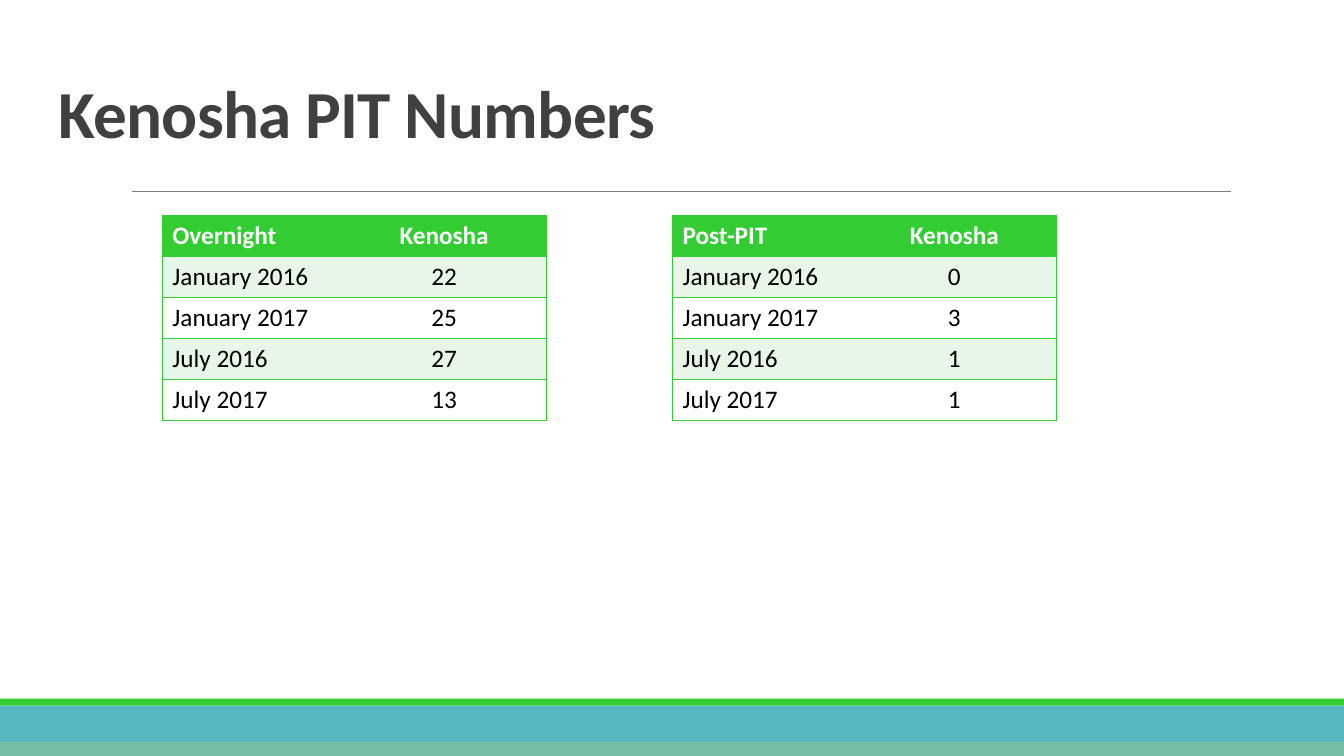
import dataclasses

import lxml.etree
import pptx
import pptx.dml.color
import pptx.enum.shapes
import pptx.enum.text
import pptx.oxml.ns
import pptx.util

SLIDE_WIDTH = pptx.util.Inches(13.33)
SLIDE_HEIGHT = pptx.util.Inches(7.5)
FONT = "Calibri"
GREEN = "33CC33"
WHITE = "FFFFFF"
STRIPE = "E8F6E8"

# Table grid, in percent of the slide
TABLE_TOP = 28.53
COLUMN_WIDTHS = (13.35, 15.23)
ROW_HEIGHT = 5.42


@dataclasses.dataclass
class Band:
    top: float
    height: float
    color: str


@dataclasses.dataclass
class CountTable:
    left: float
    heading: str
    counts: tuple[int, ...]


BANDS = (
    Band(93.33, 6.67, "58B6C0"),
    Band(92.4, 0.93, GREEN),
    Band(98.13, 1.87, "75BDA7"),
)
MONTHS = ("January 2016", "January 2017", "July 2016", "July 2017")
TABLES = (
    CountTable(12.08, "Overnight", (22, 25, 27, 13)),
    CountTable(50.04, "Post-PIT", (0, 3, 1, 1)),
)


def across(percent: float) -> int:
    return round(SLIDE_WIDTH * percent / 100)


def down(percent: float) -> int:
    return round(SLIDE_HEIGHT * percent / 100)


def color(value: str) -> pptx.dml.color.RGBColor:
    return pptx.dml.color.RGBColor.from_string(value)


def style_text(para, size: float, text_color: str, bold: bool) -> None:
    for span in para.runs:
        span.font.name = FONT
        span.font.size = pptx.util.Pt(size)
        span.font.bold = bold
        span.font.color.rgb = color(text_color)


def draw_band(page, band: Band) -> None:
    box = page.shapes.add_shape(
        pptx.enum.shapes.MSO_SHAPE.RECTANGLE,
        0, down(band.top), SLIDE_WIDTH, down(band.height))
    box.shadow.inherit = False
    box.fill.solid()
    box.fill.fore_color.rgb = color(band.color)
    box.line.fill.background()


def draw_rule(page) -> None:
    rule = page.shapes.add_connector(
        pptx.enum.shapes.MSO_CONNECTOR.STRAIGHT,
        across(9.83), down(25.33), across(91.6), down(25.33))
    rule.line.color.rgb = color("808080")
    rule.line.width = pptx.util.Pt(0.5)
    lxml.etree.SubElement(rule._element.spPr, pptx.oxml.ns.qn("a:effectLst"))


def draw_title(page) -> None:
    box = page.shapes.add_textbox(
        across(3.38), down(8.67), across(93.17), down(13.73))
    frame = box.text_frame
    frame.word_wrap = True
    frame.vertical_anchor = pptx.enum.text.MSO_ANCHOR.MIDDLE
    inset = across(0.98)
    frame.margin_left = frame.margin_right = inset
    frame.margin_top = frame.margin_bottom = inset
    frame.text = "Kenosha PIT Numbers"
    para = frame.paragraphs[0]
    para.line_spacing = 0.85
    style_text(para, 48, "404040", True)
    para.runs[0]._r.get_or_add_rPr().set("spc", "-50")


def set_borders(cell, open_side: str) -> None:
    """Outline a cell in green, leaving out the side between the columns."""
    properties = cell._tc.get_or_add_tcPr()
    for index, side in enumerate(("lnL", "lnR", "lnT", "lnB")):
        border = properties.makeelement(
            pptx.oxml.ns.qn(f"a:{side}"), {"w": str(pptx.util.Pt(1))})
        properties.insert(index, border)
        if side == open_side:
            lxml.etree.SubElement(border, pptx.oxml.ns.qn("a:noFill"))
        else:
            fill = lxml.etree.SubElement(border, pptx.oxml.ns.qn("a:solidFill"))
            lxml.etree.SubElement(fill, pptx.oxml.ns.qn("a:srgbClr"), val=GREEN)


def draw_table(page, data: CountTable) -> None:
    rows = [(data.heading, "Kenosha"), *zip(MONTHS, data.counts)]
    table = page.shapes.add_table(
        len(rows), len(COLUMN_WIDTHS), across(data.left), down(TABLE_TOP),
        across(sum(COLUMN_WIDTHS)), down(ROW_HEIGHT * len(rows))).table
    table.first_row = True
    table.horz_banding = False
    for column, width in zip(table.columns, COLUMN_WIDTHS):
        column.width = across(width)
    for row_index, values in enumerate(rows):
        table.rows[row_index].height = down(ROW_HEIGHT)
        header = row_index == 0
        fill = GREEN if header else STRIPE if row_index % 2 else WHITE
        for column_index, value in enumerate(values):
            cell = table.cell(row_index, column_index)
            cell.fill.solid()
            cell.fill.fore_color.rgb = color(fill)
            set_borders(cell, "lnL" if column_index else "lnR")
            cell.text_frame.text = str(value)
            para = cell.text_frame.paragraphs[0]
            if column_index:
                para.alignment = pptx.enum.text.PP_ALIGN.CENTER
            style_text(para, 18, WHITE if header else "000000", header)


def main() -> None:
    deck = pptx.Presentation()
    deck.slide_width = SLIDE_WIDTH
    deck.slide_height = SLIDE_HEIGHT
    page = deck.slides.add_slide(deck.slide_layouts[6])

    # Footer bands and the rule under the title
    for band in BANDS:
        draw_band(page, band)
    draw_rule(page)

    # Title and count tables
    draw_title(page)
    for data in TABLES:
        draw_table(page, data)

    deck.save("out.pptx")


if __name__ == "__main__":
    main()
